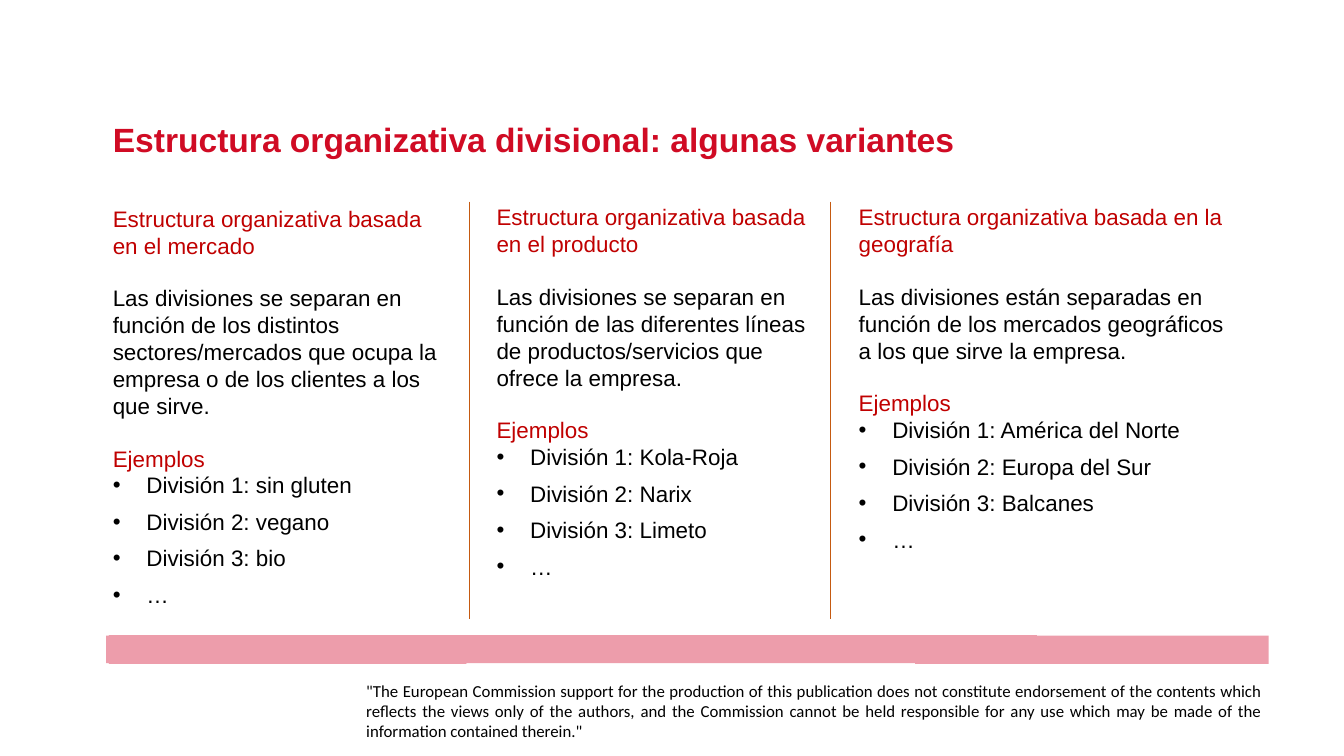
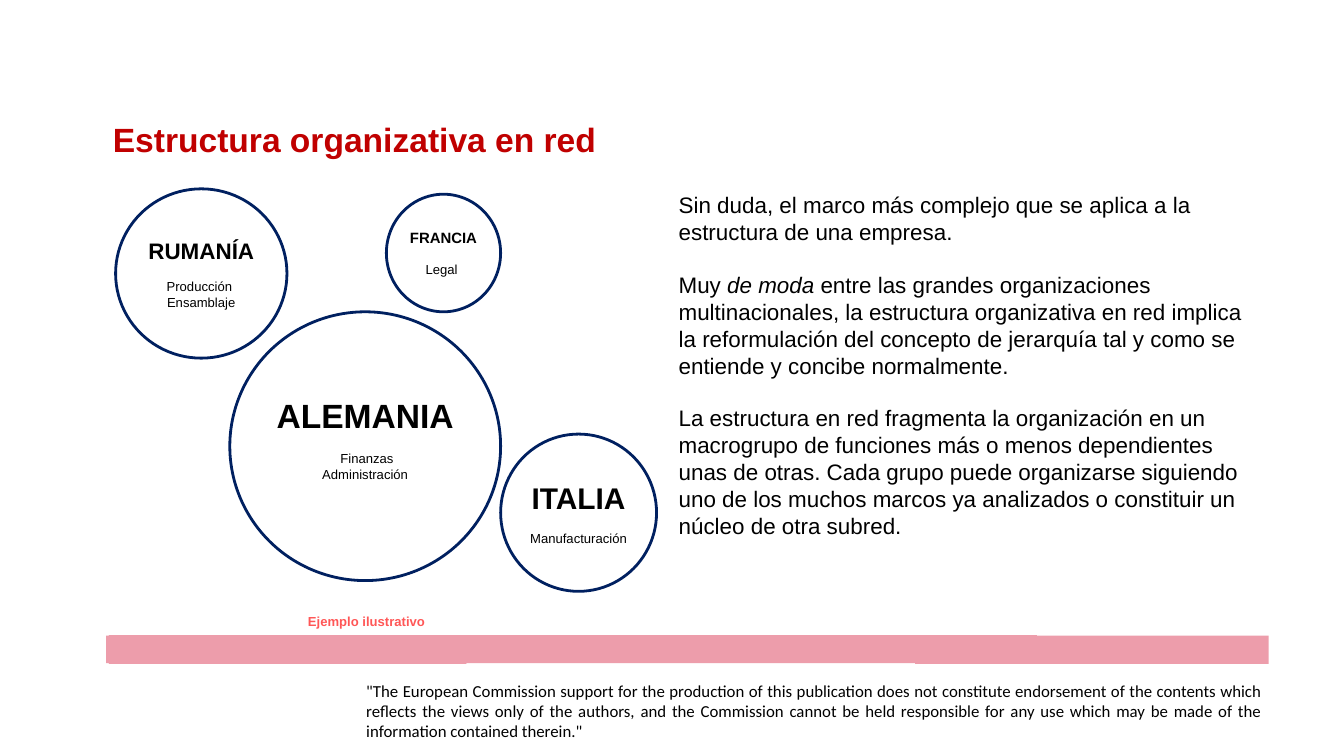
from lxml.etree import SubElement
from pptx import Presentation
from pptx.dml.color import RGBColor
from pptx.enum.shapes import MSO_CONNECTOR, MSO_SHAPE
from pptx.enum.text import MSO_ANCHOR, MSO_AUTO_SIZE, PP_ALIGN
from pptx.oxml.ns import qn
from pptx.util import Pt

PX = 9144
SLIDE_W, SLIDE_H = 2000, 1125
LEFT, TITLE_TOP = 158, 172

WHITE = RGBColor(0xFF, 0xFF, 0xFF)
BLACK = RGBColor(0x00, 0x00, 0x00)
CRIMSON = RGBColor(0xD0, 0x0B, 0x24)
RED = RGBColor(0xC0, 0x00, 0x00)
CORAL = RGBColor(0xFF, 0x57, 0x57)
PINK = RGBColor(0xED, 0x9D, 0xAB)
NAVY = RGBColor(0x00, 0x20, 0x60)
ORANGE = RGBColor(0xC5, 0x5A, 0x11)

BODY = 24
SMALL = 14
BODY_GAP = 27.6
BULLET_GAP = 10.3
SMALL_GAP = 16.1

BAND = [
    (1888, 946), (1543, 946), (1543, 945), (162, 945), (162, 946),
    (158, 946), (158, 987), (162, 987), (162, 988), (694, 988),
    (694, 987), (1362, 987), (1362, 988), (1888, 988),
]
DISCLAIMER = (
    '"The European Commission support for the production of this publication '
    "does not constitute endorsement of the contents which reflects the views "
    "only of the authors, and the Commission cannot be held responsible for any "
    'use which may be made of the information contained therein."'
)

VARIANTS = [
    ((158, 300, 522, 621), "Estructura organizativa basada en el mercado",
     "Las divisiones se separan en función de los distintos sectores/mercados "
     "que ocupa la empresa o de los clientes a los que sirve.",
     ["sin gluten", "vegano", "bio"]),
    ((729, 298, 509, 581), "Estructura organizativa basada en el producto",
     "Las divisiones se separan en función de las diferentes líneas de "
     "productos/servicios que ofrece la empresa.",
     ["Kola-Roja", "Narix", "Limeto"]),
    ((1268, 298, 590, 540), "Estructura organizativa basada en la geografía",
     "Las divisiones están separadas en función de los mercados geográficos a "
     "los que sirve la empresa.",
     ["América del Norte", "Europa del Sur", "Balcanes"]),
]
DIVIDERS = [698, 1236]

COUNTRIES = [
    ((342, 464, 403, 400), "ALEMANIA", 36, [" Finanzas", "Administración"], 27),
    ((575, 289, 170, 175), "FRANCIA", 16, ["Legal "], 5),
    ((745, 646, 232, 234), "ITALIA", 32, ["Manufacturación"], 5),
    ((172, 281, 255, 252), "RUMANÍA", 24, ["Producción ", "Ensamblaje"], 5),
]
NETWORK = [
    [("Sin duda, el marco más complejo que se aplica a la estructura de una "
      "empresa.", False)],
    [("Muy ", False), ("de moda ", True),
     ("entre las grandes organizaciones multinacionales, la estructura "
      "organizativa en red implica la reformulación del concepto de jerarquía "
      "tal y como se entiende y concibe normalmente.", False)],
    [("La estructura en red fragmenta la organización en un macrogrupo de "
      "funciones más o menos dependientes unas de otras. Cada grupo puede "
      "organizarse siguiendo uno de los muchos marcos ya analizados o "
      "constituir un núcleo de otra subred.", False)],
]


def px(*values):
    return [value * PX for value in values]


def add_run(p, text, size, color=BLACK, bold=False, italic=False, font="Arial"):
    r = p.add_run()
    r.text = text
    r.font.name = font
    r.font.size = Pt(size)
    r.font.color.rgb = color
    r.font.bold = bold
    r.font.italic = italic


def next_paragraph(tf, gap=0, align=PP_ALIGN.LEFT):
    first = tf.paragraphs[0]
    p = tf.add_paragraph() if first.runs else first
    p.alignment = align
    if gap:
        p.space_before = Pt(gap)
    return p


def add_bullet(p):
    pPr = p._p.get_or_add_pPr()
    pPr.set("marL", str(50 * PX))
    pPr.set("indent", str(-50 * PX))
    color = SubElement(pPr, qn("a:buClr"))
    SubElement(color, qn("a:srgbClr"), val=str(BLACK))
    SubElement(pPr, qn("a:buFont"), typeface="Arial")
    SubElement(pPr, qn("a:buChar"), char="•")


def set_insets(tf, side, edge):
    tf.margin_left = tf.margin_right = side * PX
    tf.margin_top = tf.margin_bottom = edge * PX


def add_text_frame(s, box, side=10, edge=5):
    tf = s.shapes.add_textbox(*px(*box)).text_frame
    tf.word_wrap = True
    tf.auto_size = MSO_AUTO_SIZE.SHAPE_TO_FIT_TEXT
    set_insets(tf, side, edge)
    return tf


def add_band(s):
    builder = s.shapes.build_freeform(*BAND[0], scale=PX)
    builder.add_line_segments(BAND[1:], close=True)
    sp = builder.convert_to_shape()
    sp.shadow.inherit = False
    sp.fill.solid()
    sp.fill.fore_color.rgb = PINK
    sp.line.fill.background()


def add_disclaimer(s):
    tf = add_text_frame(s, (545, 1015, 1333, 76), 0, 0)
    p = next_paragraph(tf, align=PP_ALIGN.JUSTIFY)
    p.line_spacing = 0.98
    add_run(p, DISCLAIMER, 18, font="Calibri")


def add_slide(prs, title, color):
    s = prs.slides.add_slide(prs.slide_layouts[6])
    s.background.fill.solid()
    s.background.fill.fore_color.rgb = WHITE
    add_band(s)
    add_disclaimer(s)
    tf = add_text_frame(s, (LEFT, TITLE_TOP, 1377, 71))
    add_run(next_paragraph(tf), title, 36, color, bold=True)
    return s


def add_variant(s, box, heading, description, divisions):
    tf = add_text_frame(s, box)
    add_run(next_paragraph(tf), heading, BODY, RED)
    add_run(next_paragraph(tf, BODY_GAP), description, BODY)
    add_run(next_paragraph(tf, BODY_GAP), "Ejemplos", BODY, RED)
    items = [f"División {n}: {name}" for n, name in enumerate(divisions, 1)]
    for i, item in enumerate(items + ["…"]):
        p = next_paragraph(tf, BULLET_GAP if i else 0)
        add_bullet(p)
        add_run(p, item, BODY)


def add_divider(s, x):
    line = s.shapes.add_connector(MSO_CONNECTOR.STRAIGHT, *px(x, 300, x, 921))
    line.line.color.rgb = ORANGE
    line.line.width = Pt(0.75)
    SubElement(line._element.spPr, qn("a:effectLst"))


def add_country(s, box, name, size, functions, bottom):
    sp = s.shapes.add_shape(MSO_SHAPE.OVAL, *px(*box))
    sp.shadow.inherit = False
    sp.fill.solid()
    sp.fill.fore_color.rgb = WHITE
    sp.line.color.rgb = NAVY
    sp.line.width = Pt(3)
    tf = sp.text_frame
    tf.word_wrap = True
    tf.vertical_anchor = MSO_ANCHOR.MIDDLE
    set_insets(tf, 8, 5)
    tf.margin_bottom = bottom * PX
    add_run(next_paragraph(tf, align=PP_ALIGN.CENTER), name, size, bold=True)
    for i, function in enumerate(functions):
        p = next_paragraph(tf, 0 if i else SMALL_GAP, PP_ALIGN.CENTER)
        add_run(p, function, SMALL)


def add_explanation(s):
    tf = add_text_frame(s, (1000, 280, 892, 535))
    for i, runs in enumerate(NETWORK):
        p = next_paragraph(tf, BODY_GAP if i else 0)
        for text, italic in runs:
            add_run(p, text, BODY, italic=italic)


def add_caption(s):
    tf = add_text_frame(s, (423, 908, 245, 34))
    p = next_paragraph(tf, align=PP_ALIGN.CENTER)
    add_run(p, "Ejemplo ilustrativo", SMALL, CORAL, bold=True)


def main():
    prs = Presentation()
    prs.slide_width, prs.slide_height = px(SLIDE_W, SLIDE_H)

    s = add_slide(prs, "Estructura organizativa divisional: algunas variantes", CRIMSON)
    for variant in VARIANTS:
        add_variant(s, *variant)
    for x in DIVIDERS:
        add_divider(s, x)

    s = add_slide(prs, "Estructura organizativa en red", RED)
    add_explanation(s)
    for country in COUNTRIES:
        add_country(s, *country)
    add_caption(s)

    prs.save("out.pptx")


if __name__ == "__main__":
    main()
